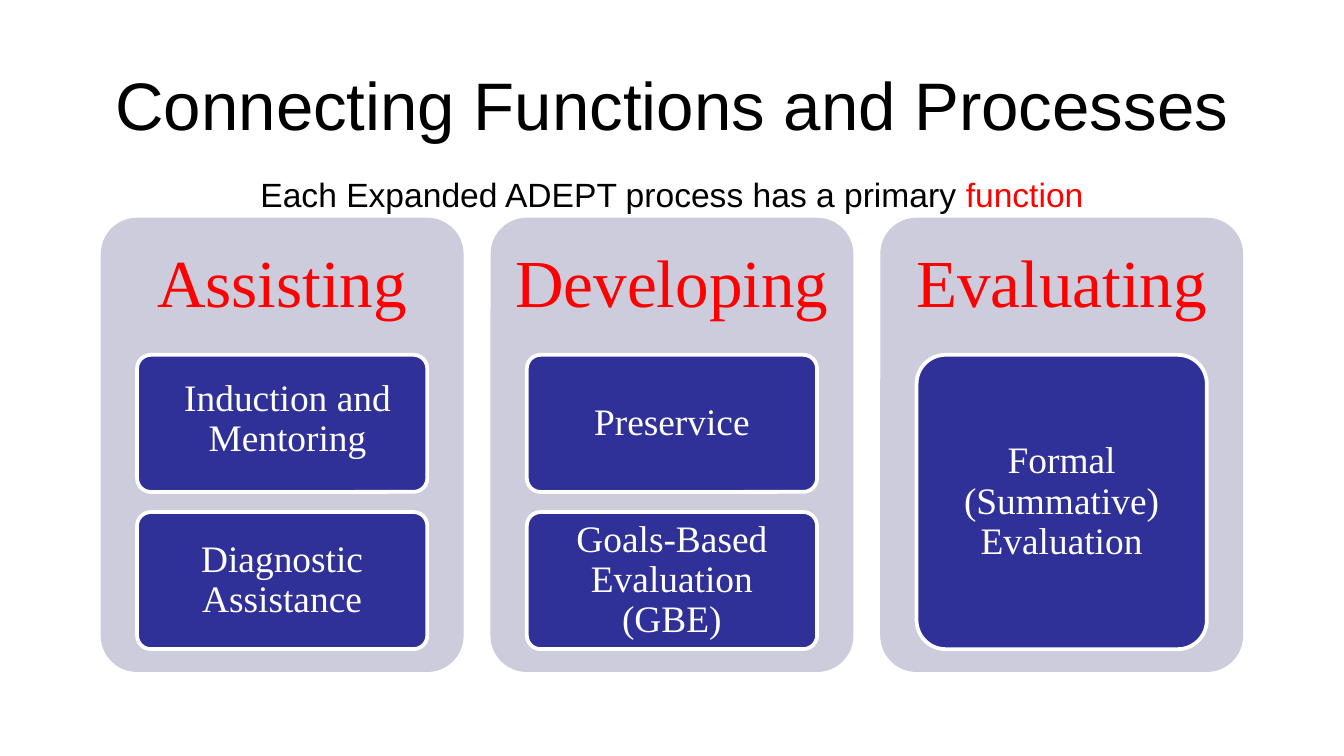
from dataclasses import dataclass
from pptx import Presentation
from pptx.dml.color import RGBColor
from pptx.enum.shapes import MSO_SHAPE
from pptx.enum.text import MSO_ANCHOR, PP_ALIGN
from pptx.util import Inches, Pt

ROUND = MSO_SHAPE.ROUNDED_RECTANGLE
TOP, MIDDLE = MSO_ANCHOR.TOP, MSO_ANCHOR.MIDDLE
CENTER = PP_ALIGN.CENTER


@dataclass(frozen=True)
class Theme:
    """Colours, fonts and type sizes of the slide."""
    black: str = "000000"
    white: str = "FFFFFF"
    red: str = "FF0000"
    panel: str = "CCCCDD"
    card: str = "303099"
    sans: str = "Arial"
    serif: str = "Times New Roman"
    large: int = 36
    label: int = 20
    small: int = 18


THEME = Theme()
COLUMNS = [
    ("Assisting", [("Induction and Mentoring", 0.04, 0.03),
                   ("Diagnostic Assistance", 0, 0)]),
    ("Developing", [("Preservice", 0, 0),
                    ("Goals-Based Evaluation (GBE)", 0, 0)]),
    ("Evaluating", [("Formal (Summative) Evaluation", 0, 0)]),
]


def set_frame(frame, anchor, left, top, right, bottom):
    """Wrap the text and set its anchor and insets."""
    frame.word_wrap = True
    frame.vertical_anchor = anchor
    frame.margin_left, frame.margin_right = Inches(left), Inches(right)
    frame.margin_top, frame.margin_bottom = Inches(top), Inches(bottom)


def add_run(para, text, size, font, color):
    """Add one styled run to a centred paragraph."""
    para.alignment = CENTER
    run = para.add_run()
    run.text = text
    run.font.size = Pt(size)
    run.font.name = font
    run.font.color.rgb = RGBColor.from_string(color)


def add_round(slide, box, fill):
    """Add a rounded box without a line."""
    shape = slide.shapes.add_shape(ROUND, *map(Inches, box))
    shape.adjustments[0] = 0.1
    shape.shadow.inherit = False
    shape.fill.solid()
    shape.fill.fore_color.rgb = RGBColor.from_string(fill)
    shape.line.fill.background()
    return shape


def add_title(slide, box):
    """Place the title and the line below it."""
    frame = slide.shapes.add_textbox(*map(Inches, box)).text_frame
    set_frame(frame, TOP, 0.05, 0, 0.05, 0)
    add_run(frame.paragraphs[0], "Connecting Functions and Processes",
            THEME.large, THEME.sans, THEME.black)
    para = frame.add_paragraph()
    para.space_before = Pt(16)
    add_run(para, "Each Expanded ADEPT process has a primary ",
            THEME.small, THEME.sans, THEME.black)
    add_run(para, "function", THEME.small, THEME.sans, THEME.red)


def add_card(slide, box, text, right, up):
    """Place a process card, its text nudged right and up."""
    card = add_round(slide, box, THEME.card)
    card.line.color.rgb = RGBColor.from_string(THEME.white)
    card.line.width = Pt(2)
    set_frame(card.text_frame, MIDDLE,
              0.08 + 2 * right, 0.02, 0.08, 0.02 + 2 * up)
    para = card.text_frame.paragraphs[0]
    para.line_spacing = 0.9
    add_run(para, text, THEME.label, THEME.serif, THEME.white)


def add_column(slide, box, head, cards):
    """Place a function panel with its heading and stacked cards."""
    left, top, width, height = box
    add_round(slide, box, THEME.panel)
    label = slide.shapes.add_textbox(
        *map(Inches, (left, top, width, 0.3 * height)))
    set_frame(label.text_frame, MIDDLE, 0.15, 0.15, 0.15, 0.15)
    para = label.text_frame.paragraphs[0]
    para.line_spacing = 0.9
    add_run(para, head, THEME.large, THEME.serif, THEME.red)
    gap, area = 0.15, 2.19
    tall = (area - gap * (len(cards) - 1)) / len(cards)
    for row, (text, right, up) in enumerate(cards):
        place = (left + 0.1 * width, top + 1.02 + row * (tall + gap),
                 0.8 * width, tall)
        add_card(slide, place, text, right, up)


def main():
    """Build and save the slide."""
    deck = Presentation()
    deck.slide_width, deck.slide_height = Inches(10), Inches(10 * 9 / 16)
    slide = deck.slides.add_slide(deck.slide_layouts[6])
    add_title(slide, (0.75, 0.47, 8.5, 1.06))
    for col, (head, cards) in enumerate(COLUMNS):
        add_column(slide, (0.75 + 2.9 * col, 1.62, 2.7, 3.38), head, cards)
    deck.save("out.pptx")


if __name__ == "__main__":
    main()
